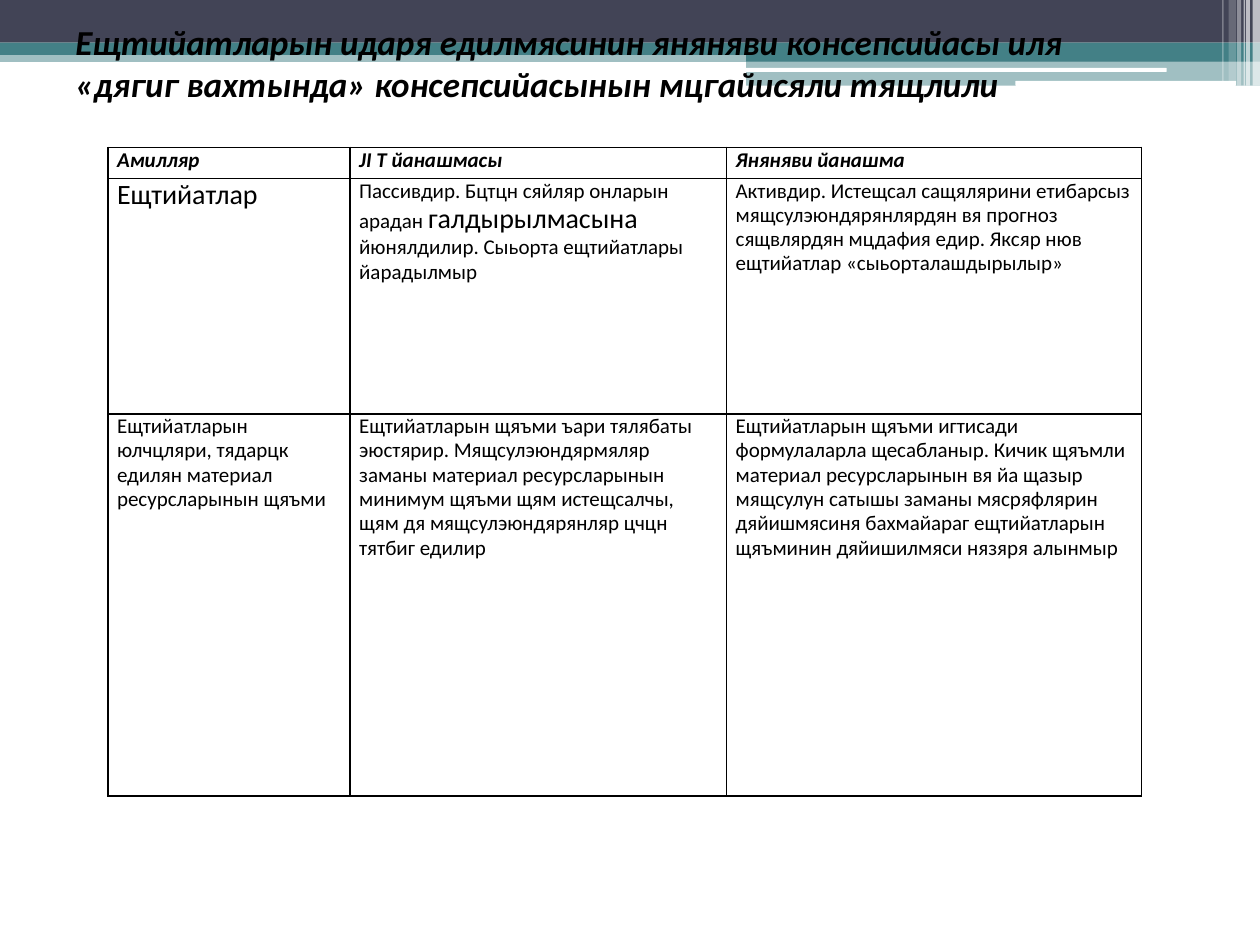
from lxml.etree import SubElement
from pptx import Presentation
from pptx.dml.color import RGBColor
from pptx.enum.shapes import MSO_SHAPE
from pptx.enum.text import MSO_ANCHOR, MSO_AUTO_SIZE, PP_ALIGN
from pptx.oxml.ns import qn
from pptx.util import Cm, Pt

BLACK, WHITE, NAVY, TEAL = "000000", "FFFFFF", "424456", "438086"
FONT = "Calibri"
BANDS = [
    (0, 1.02, 25.4, 0.23, TEAL, 50),
    (0, 0, 25.4, 0.86, NAVY, 100),
    (0, 0.86, 25.4, 0.25, TEAL, 100),
    (15.04, 0.99, 10.36, 0.25, TEAL, 100),
    (15.04, 1.22, 10.36, 0.51, TEAL, 50),
]
HIGHLIGHTS = [(15.01, 1.37, 8.51, 0.08), (20.47, 1.63, 4.45, 0.1)]
STRIPES = [
    (25.25, 0.15, 1.73, 65),
    (25.12, 0.08, 1.73, 65),
    (25.07, 0.03, 1.73, 60),
    (24.94, 0.08, 1.73, 40),
    (24.77, 0.15, 1.63, 20),
    (24.64, 0.03, 1.63, 30),
]
TITLE_LINES = [
    "Ещтийатларын идаря едилмясинин яняняви консепсийасы иля ",
    "«дягиг вахтында» консепсийасынын мцгайисяли тящлили",
]
COLUMN_WIDTHS = [4.88, 7.59, 8.36]
ROW_HEIGHTS = [0.63, 4.75, 7.7]
TABLE_ROWS = [
    [
        [("Амилляр", 12)],
        [("JI T йанашмасы", 12)],
        [("Яняняви йанашма", 12)],
    ],
    [
        [("Ещтийатлар", 16)],
        [
            ("Пассивдир. Бцтцн сяйляр онларын арадан ", 12),
            ("галдырылмасына", 16),
            (" йюнялдилир. Сыьорта ещтийатлары йарадылмыр", 12),
        ],
        [("Активдир. Истещсал сащялярини етибарсыз мящсулэюндярянлярдян вя прогноз "
          "сящвлярдян мцдафия едир. Яксяр нюв ещтийатлар «сыьорталашдырылыр»", 12)],
    ],
    [
        [("Ещтийатларын юлчцляри, тядарцк едилян материал ресурсларынын щяъми", 12)],
        [("Ещтийатларын щяъми ъари тялябаты эюстярир. Мящсулэюндярмяляр заманы "
          "материал ресурсларынын минимум щяъми щям истещсалчы, щям дя "
          "мящсулэюндярянляр цчцн тятбиг едилир", 12)],
        [("Ещтийатларын щяъми игтисади формулаларла щесабланыр. Кичик щяъмли материал "
          "ресурсларынын вя йа щазыр мящсулун сатышы заманы мясряфлярин дяйишмясиня "
          "бахмайараг ещтийатларын щяъминин дяйишилмяси нязяря алынмыр", 12)],
    ],
]


def set_fill(fill, color, opacity=100):
    """Give a fill a solid colour with an opacity in percent."""
    fill.solid()
    fill.fore_color.rgb = RGBColor.from_string(color)
    if opacity < 100:
        color_element = fill._xPr.find(qn("a:solidFill"))[0]
        SubElement(color_element, qn("a:alpha"), val=str(opacity * 1000))


def add_block(slide, left, top, width, height, color, opacity=100, kind=MSO_SHAPE.RECTANGLE):
    """Add a borderless filled shape."""
    shape = slide.shapes.add_shape(kind, Cm(left), Cm(top), Cm(width), Cm(height))
    shape.shadow.inherit = False
    shape.line.fill.background()
    set_fill(shape.fill, color, opacity)


def add_run(paragraph, text, size, emphasis=False):
    """Add a black run, bold italic when emphasised."""
    run = paragraph.add_run()
    run.text = text
    run.font.name = FONT
    run.font.size = Pt(size)
    run.font.bold = run.font.italic = emphasis
    run.font.color.rgb = RGBColor.from_string(BLACK)


def add_header_decoration(slide):
    """Draw the bands, highlights and stripes along the top edge."""
    for band in BANDS:
        add_block(slide, *band)
    for highlight in HIGHLIGHTS:
        add_block(slide, *highlight, WHITE, kind=MSO_SHAPE.ROUNDED_RECTANGLE)
    for left, width, height, opacity in STRIPES:
        add_block(slide, left, 0, width, height, WHITE, opacity)


def add_title(slide):
    """Add the two-line title."""
    frame = slide.shapes.add_textbox(Cm(1.27), Cm(0.76), Cm(22.86), Cm(1.83)).text_frame
    frame.word_wrap = True
    frame.auto_size = MSO_AUTO_SIZE.NONE
    frame.vertical_anchor = MSO_ANCHOR.MIDDLE
    frame.margin_bottom = Cm(0.95)
    paragraph = frame.paragraphs[0]
    for index, line in enumerate(TITLE_LINES):
        if index:
            paragraph.add_line_break()
        add_run(paragraph, line, 20, emphasis=True)


def set_borders(cell, color, width):
    """Draw a solid line on all four sides of a cell."""
    properties = cell._tc.get_or_add_tcPr()
    for side in ("lnL", "lnR", "lnT", "lnB"):
        line = SubElement(properties, qn(f"a:{side}"), w=str(Pt(width)))
        fill = SubElement(line, qn("a:solidFill"))
        SubElement(fill, qn("a:srgbClr"), val=color)


def fill_cell(cell, runs, is_header):
    """Style a cell and write its runs."""
    cell.margin_left = cell.margin_right = Cm(0.18)
    cell.margin_top = cell.margin_bottom = 0
    set_borders(cell, BLACK, 1)
    cell.fill.background()
    paragraph = cell.text_frame.paragraphs[0]
    if is_header:
        paragraph.alignment = PP_ALIGN.JUSTIFY
    else:
        paragraph.line_spacing = 0.95
    for text, size in runs:
        add_run(paragraph, text, size, is_header)


def add_comparison_table(slide):
    """Add the table that compares the two approaches."""
    table = slide.shapes.add_table(
        len(ROW_HEIGHTS), len(COLUMN_WIDTHS), Cm(2.18), Cm(2.97),
        Cm(sum(COLUMN_WIDTHS)), Cm(sum(ROW_HEIGHTS)),
    ).table
    for column, width in zip(table.columns, COLUMN_WIDTHS):
        column.width = Cm(width)
    for row_index, (row, height) in enumerate(zip(table.rows, ROW_HEIGHTS)):
        row.height = Cm(height)
        for cell, runs in zip(row.cells, TABLE_ROWS[row_index]):
            fill_cell(cell, runs, row_index == 0)


def main():
    """Build the slide and save it."""
    presentation = Presentation()
    presentation.slide_width = Cm(25.4)
    presentation.slide_height = Cm(19.05)
    slide = presentation.slides.add_slide(presentation.slide_layouts[6])
    add_header_decoration(slide)
    add_title(slide)
    add_comparison_table(slide)
    presentation.save("out.pptx")


if __name__ == "__main__":
    main()
